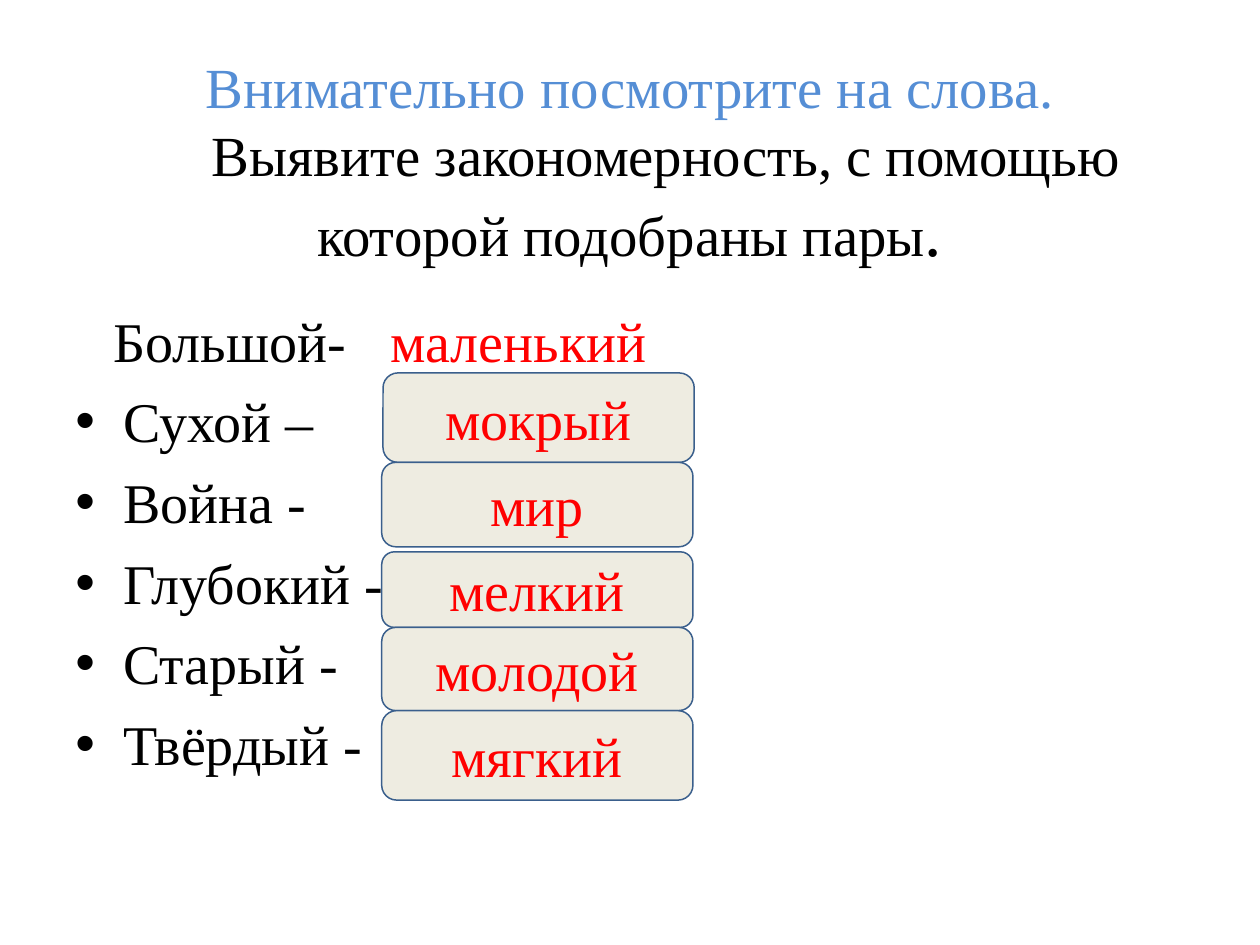
"""Build the word-pairs slide with antonym answer cards."""
from lxml.etree import SubElement
from pptx import Presentation
from pptx.dml.color import RGBColor
from pptx.enum.shapes import MSO_SHAPE
from pptx.enum.text import MSO_ANCHOR, PP_ALIGN
from pptx.oxml.ns import qn
from pptx.util import Inches, Pt

BLUE = RGBColor(0x55, 0x8E, 0xD5)
BLACK = RGBColor(0, 0, 0)
RED = RGBColor(0xFF, 0, 0)
CREAM = RGBColor(0xEE, 0xEC, 0xE1)
NAVY = RGBColor(0x3A, 0x5F, 0x8C)


def add_run(p, text, size, color):
    r = p.add_run()
    r.text = text
    r.font.name = "Times New Roman"
    r.font.size = Pt(size)
    r.font.color.rgb = color


def add_box(left, top, width, height):
    tf = s.shapes.add_textbox(Inches(left), Inches(top), Inches(width), Inches(height)).text_frame
    tf.word_wrap = True
    return tf


prs = Presentation()
prs.slide_width, prs.slide_height = Inches(10), Inches(7.5)
s = prs.slides.add_slide(prs.slide_layouts[6])

tf = add_box(0.5, 0.36, 9, 2.28)
p = tf.paragraphs[0]
p.alignment = PP_ALIGN.CENTER
add_run(p, "Внимательно посмотрите на слова.", 32.4, BLUE)
p = tf.add_paragraph()
p.alignment = PP_ALIGN.CENTER
p._p.get_or_add_pPr().set("indent", str(Inches(0.57)))
add_run(p, "Выявите закономерность, с помощью которой подобраны пары", 32.4, BLACK)
add_run(p, ".", 39.6, BLACK)

tf = add_box(0.5, 2.38, 9, 4.32)
p = tf.paragraphs[0]
pPr = p._p.get_or_add_pPr()
pPr.set("indent", str(Inches(0.3)))
tabs = SubElement(pPr, qn("a:tabLst"))
SubElement(tabs, qn("a:tab"), pos=str(Inches(2.59)), algn="l")
add_run(p, "Большой-\t", 32, BLACK)
add_run(p, "маленький", 32, RED)

for word in ["Сухой –", "Война -", "Глубокий -", "Старый -", "Твёрдый -"]:
    p = tf.add_paragraph()
    p.space_before = Pt(7.7)
    pPr = p._p.get_or_add_pPr()
    pPr.set("marL", str(Inches(0.38)))
    pPr.set("indent", str(Inches(-0.38)))
    SubElement(pPr, qn("a:buFont"), typeface="Arial")
    SubElement(pPr, qn("a:buChar"), char="•")
    add_run(p, word, 32, BLACK)

cards = [
    ("мокрый", 3.04, 2.96, 0.71),
    ("мир", 3.03, 3.67, 0.67),
    ("мелкий", 3.03, 4.38, 0.6),
    ("молодой", 3.03, 4.98, 0.66),
    ("мягкий", 3.03, 5.64, 0.71),
]
for word, left, top, height in cards:
    sp = s.shapes.add_shape(MSO_SHAPE.ROUNDED_RECTANGLE, Inches(left), Inches(top),
                            Inches(2.47), Inches(height))
    sp.shadow.inherit = False
    sp.fill.solid()
    sp.fill.fore_color.rgb = CREAM
    sp.line.color.rgb = NAVY
    sp.line.width = Pt(0.85)
    tf = sp.text_frame
    tf.vertical_anchor = MSO_ANCHOR.MIDDLE
    p = tf.paragraphs[0]
    p.alignment = PP_ALIGN.CENTER
    add_run(p, word, 32, RED)

prs.save("out.pptx")
